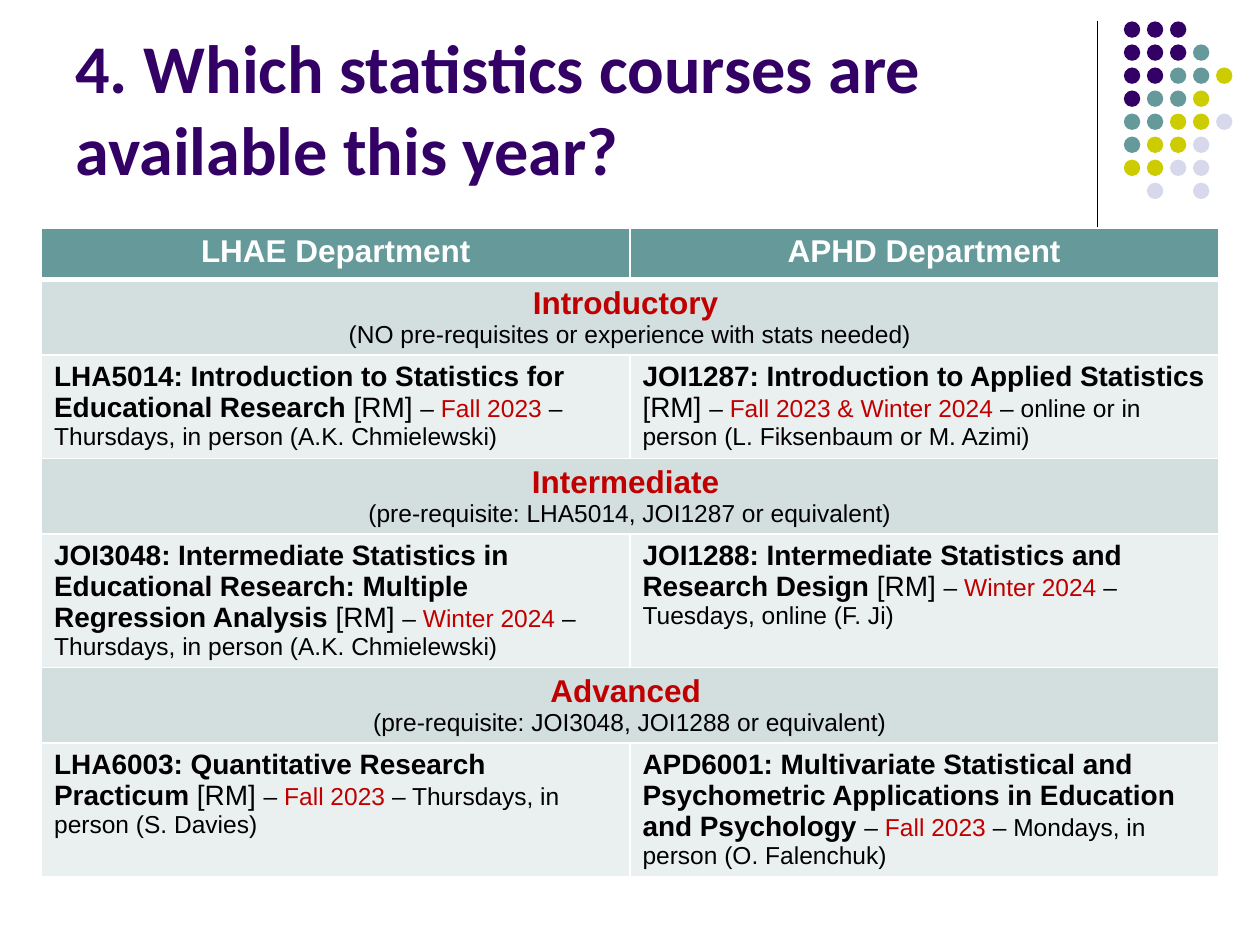
"""Build a slide listing the statistics courses of two departments."""
from dataclasses import dataclass

from lxml import etree
from pptx import Presentation
from pptx.dml.color import RGBColor
from pptx.enum.shapes import MSO_CONNECTOR, MSO_SHAPE
from pptx.enum.text import MSO_ANCHOR, PP_ALIGN
from pptx.oxml.ns import qn
from pptx.util import Inches, Pt

LINE, OVAL = MSO_CONNECTOR.STRAIGHT, MSO_SHAPE.OVAL
LEFT, CENTER = PP_ALIGN.LEFT, PP_ALIGN.CENTER
BOTTOM = MSO_ANCHOR.BOTTOM


@dataclass(frozen=True)
class Theme:
    ink: str = "000000"
    white: str = "FFFFFF"
    purple: str = "330066"
    teal: str = "669999"
    lime: str = "CCCC00"
    lilac: str = "D8D8EC"
    red: str = "C00000"
    level_fill: str = "D3DEDE"
    course_fill: str = "EAEFEF"
    title_font: str = "Calibri"
    body_font: str = "Arial"
    title: int = 39
    heading: int = 18
    course: int = 16
    detail: int = 14


@dataclass(frozen=True)
class Course:
    name: str
    tag: str
    term: str
    detail: str


@dataclass(frozen=True)
class Level:
    name: str
    requirement: str
    courses: tuple[Course, Course]


T = Theme()
DEPARTMENTS = ("LHAE Department", "APHD Department")
LEVELS = (
    Level("Introductory ", "(NO pre-requisites or experience with stats needed)", (
        Course("LHA5014: Introduction to Statistics for Educational Research ", "[RM] ",
               "Fall 2023 ", "– Thursdays, in person (A.K. Chmielewski)"),
        Course("JOI1287: Introduction to Applied Statistics ", "[RM] ",
               "Fall 2023 & Winter 2024",
               " – online or in person (L. Fiksenbaum or M. Azimi)"))),
    Level("Intermediate ", "(pre-requisite: LHA5014, JOI1287 or equivalent)", (
        Course("JOI3048: Intermediate Statistics in Educational Research: "
               "Multiple Regression Analysis ", "[RM] ",
               "Winter 2024 ", "– Thursdays, in person (A.K. Chmielewski)"),
        Course("JOI1288: Intermediate Statistics and Research Design ", "[RM] ",
               "Winter 2024 ", "– Tuesdays, online (F. Ji)"))),
    Level("Advanced ", "(pre-requisite: JOI3048, JOI1288 or equivalent)", (
        Course("LHA6003: Quantitative Research Practicum ", "[RM] ",
               "Fall 2023 ", "– Thursdays, in person (S. Davies)"),
        Course("APD6001: Multivariate Statistical and Psychometric Applications "
               "in Education and Psychology ", "",
               "Fall 2023 ", "– Mondays, in person (O. Falenchuk)"))),
)
ROW_HEIGHTS = (0.41, 0.59, 0.82, 0.59, 1.06, 0.59, 1.06)
COLUMN_WIDTH = 4.67
DOT_ROWS = ("PPP", "PPPT", "PPTTL", "PTTL", "TTLLV", "TLLV", "LLVV", " V V")
DOT_COLORS = {"P": T.purple, "T": T.teal, "L": T.lime, "V": T.lilac}
DOT_SIZE, DOT_PITCH = 0.13, 1.28 / 7


def add_text(p, text: str, *, size: int, color: str = T.ink, bold: bool = False,
             font: str = T.body_font, align=LEFT) -> None:
    """Append a formatted run to a paragraph."""
    p.alignment = align
    r = p.add_run()
    r.text = text
    r.font.name, r.font.size, r.font.bold = font, Pt(size), bold
    r.font.color.rgb = RGBColor.from_string(color)


def add_dots(s) -> None:
    """Draw the corner grid of coloured dots."""
    for row, codes in enumerate(DOT_ROWS):
        for col, code in enumerate(codes):
            if code == " ":
                continue
            sp = s.shapes.add_shape(
                OVAL, Inches(8.92 + col * DOT_PITCH), Inches(0.17 + row * DOT_PITCH),
                Inches(DOT_SIZE), Inches(DOT_SIZE))
            sp.shadow.inherit = False
            sp.fill.solid()
            sp.fill.fore_color.rgb = RGBColor.from_string(DOT_COLORS[code])
            sp.line.fill.background()


def add_rule(s) -> None:
    """Draw the vertical rule beside the title."""
    line = s.shapes.add_connector(LINE, Inches(8.71), Inches(0.17), Inches(8.71), Inches(1.83))
    line.line.width = Pt(0.75)
    line.line.color.rgb = RGBColor.from_string(T.ink)
    etree.SubElement(line._element.spPr, qn("a:effectLst"))


def add_title(s) -> None:
    """Add the slide heading."""
    sp = s.shapes.add_textbox(Inches(0.5), Inches(0.13), Inches(8.25), Inches(1.42))
    tf = sp.text_frame
    tf.word_wrap, tf.vertical_anchor = True, BOTTOM
    add_text(tf.paragraphs[0], "4. Which statistics courses are available this year?",
             size=T.title, color=T.purple, bold=True, font=T.title_font)


def style_cell(cell, fill: str, top: int = 1, bottom: int = 1) -> None:
    """Fill a cell and give it white borders with widths in points."""
    cell.fill.solid()
    cell.fill.fore_color.rgb = RGBColor.from_string(fill)
    tc_pr = cell._tc.get_or_add_tcPr()
    widths = {"lnL": 1, "lnR": 1, "lnT": top, "lnB": bottom}
    for i, (side, width) in enumerate(widths.items()):
        ln = etree.Element(qn(f"a:{side}"), w=str(Pt(width)))
        solid = etree.SubElement(ln, qn("a:solidFill"))
        etree.SubElement(solid, qn("a:srgbClr"), val=T.white)
        tc_pr.insert(i, ln)


def write_level(tbl, row: int, level: Level) -> None:
    """Write a merged level heading across both columns."""
    for col in range(2):
        style_cell(tbl.cell(row, col), T.level_fill, top=3 if row == 1 else 1)
    cell = tbl.cell(row, 0)
    cell.merge(tbl.cell(row, 1))
    tf = cell.text_frame
    add_text(tf.paragraphs[0], level.name, size=T.heading, color=T.red, bold=True, align=CENTER)
    add_text(tf.add_paragraph(), level.requirement, size=T.detail, align=CENTER)


def write_course(cell, course: Course) -> None:
    """Write one course description."""
    style_cell(cell, T.course_fill)
    p = cell.text_frame.paragraphs[0]
    add_text(p, course.name, size=T.course, bold=True)
    if course.tag:
        add_text(p, course.tag, size=T.course)
    add_text(p, "– ", size=T.detail)
    add_text(p, course.term, size=T.detail, color=T.red)
    add_text(p, course.detail, size=T.detail)


def add_course_table(s) -> None:
    """Add the table of courses by level and department."""
    tbl = s.shapes.add_table(
        len(ROW_HEIGHTS), 2, Inches(0.33), Inches(1.81),
        Inches(2 * COLUMN_WIDTH), Inches(sum(ROW_HEIGHTS))).table
    for row, height in zip(tbl.rows, ROW_HEIGHTS):
        row.height = Inches(height)
    for col, name in enumerate(DEPARTMENTS):
        tbl.columns[col].width = Inches(COLUMN_WIDTH)
        cell = tbl.cell(0, col)
        style_cell(cell, T.teal, bottom=3)
        add_text(cell.text_frame.paragraphs[0], name, size=T.heading, color=T.white,
                 bold=True, align=CENTER)
    for i, level in enumerate(LEVELS):
        row = 1 + 2 * i
        write_level(tbl, row, level)
        for col, course in enumerate(level.courses):
            write_course(tbl.cell(row + 1, col), course)


def main() -> None:
    """Build and save the slide."""
    prs = Presentation()
    prs.slide_width, prs.slide_height = Inches(10), Inches(7.5)
    s = prs.slides.add_slide(prs.slide_layouts[6])
    add_rule(s)
    add_dots(s)
    add_course_table(s)
    add_title(s)
    prs.save("out.pptx")


if __name__ == "__main__":
    main()
